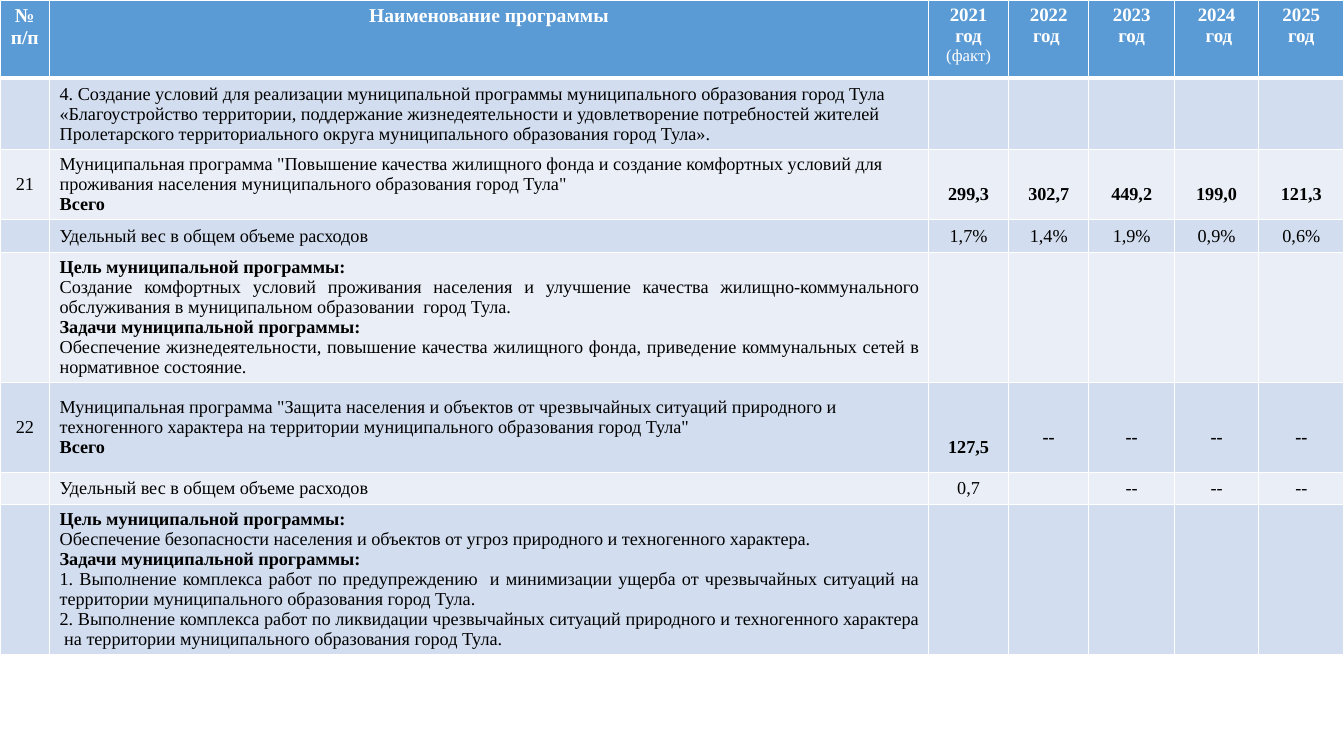
from dataclasses import dataclass

from lxml.etree import SubElement
from pptx import Presentation
from pptx.dml.color import RGBColor
from pptx.enum.text import MSO_ANCHOR, PP_ALIGN
from pptx.oxml.ns import qn
from pptx.util import Cm, Pt


@dataclass(frozen=True)
class Theme:
    font: str = "Times New Roman"
    header: str = "5B9BD5"
    band_dark: str = "D2DEEF"
    band_light: str = "EAEFF7"
    white: str = "FFFFFF"
    black: str = "000000"
    head: float = 14
    year: float = 13.5
    body: float = 13
    note: float = 12


T = Theme()
LEFT, CENTER, JUSTIFY = PP_ALIGN.LEFT, PP_ALIGN.CENTER, PP_ALIGN.JUSTIFY


def write(cell, text, size=T.body, bold=False, color=T.black, align=CENTER, same_line=False):
    """Add text to a cell, in a new paragraph unless same_line is set."""
    tf = cell.text_frame
    p = tf.paragraphs[-1]
    if tf.text and not same_line:
        p = tf.add_paragraph()
    p.alignment = align
    r = p.add_run()
    r.text = text
    r.font.name, r.font.size, r.font.bold = T.font, Pt(size), bold
    r.font.color.rgb = RGBColor.from_string(color)


def style_cell(cell, fill, bottom=1):
    """Give a cell white borders and a solid fill."""
    tcPr = cell._tc.get_or_add_tcPr()
    for side, width in (("L", 1), ("R", 1), ("T", 1), ("B", bottom)):
        ln = SubElement(tcPr, qn(f"a:ln{side}"), w=str(Pt(width)))
        SubElement(SubElement(ln, qn("a:solidFill")), qn("a:srgbClr"), val=T.white)
    cell.fill.solid()
    cell.fill.fore_color.rgb = RGBColor.from_string(fill)


# Content
YEARS = [["2021 год "], ["2022 год "], ["2023 год"], ["2024", " год"], ["2025", "год"]]
GOAL = "Цель муниципальной программы: "
TASKS = "Задачи муниципальной программы:"
TOTAL = "Всего"
SHARE = "Удельный вес в общем объеме расходов"
BOLD_LINES = (GOAL, TASKS, TOTAL)
NO_VALUES = [""] * 5

# Number, name lines, alignment, yearly values, extra top margins of the values (cm)
ROWS = [
    ("", ["4. Создание условий для реализации муниципальной программы муниципального образования "
          "город Тула «Благоустройство территории, поддержание жизнедеятельности и удовлетворение "
          "потребностей жителей Пролетарского территориального округа муниципального образования "
          "город Тула»."], LEFT, NO_VALUES, [0] * 5),
    ("21", ['Муниципальная программа "Повышение качества жилищного фонда и создание комфортных '
            'условий для проживания населения муниципального образования город Тула"', TOTAL],
     LEFT, ["299,3", "302,7", "449,2", "199,0", "121,3"], [0.5] * 5),
    ("", [SHARE], JUSTIFY, ["1,7%", "1,4%", "1,9%", "0,9%", "0,6%"], [0] * 5),
    ("", [GOAL,
          "Создание комфортных условий проживания населения и улучшение качества "
          "жилищно-коммунального обслуживания в муниципальном образовании  город Тула.",
          TASKS,
          "Обеспечение жизнедеятельности, повышение качества жилищного фонда, приведение "
          "коммунальных сетей в нормативное состояние."], JUSTIFY, NO_VALUES, [0] * 5),
    ("22", ['Муниципальная программа "Защита населения и объектов от чрезвычайных ситуаций '
            'природного и техногенного характера на территории муниципального образования '
            'город Тула"', TOTAL],
     LEFT, ["127,5", "--", "--", "--", "--"], [1, 0.5, 0.5, 0.5, 0.5]),
    ("", [SHARE], JUSTIFY, ["0,7", "", "--", "--", "--"], [0] * 5),
    ("", [GOAL,
          "Обеспечение безопасности населения и объектов от угроз природного и техногенного "
          "характера.",
          TASKS,
          "1. Выполнение комплекса работ по предупреждению  и минимизации ущерба от чрезвычайных "
          "ситуаций на территории муниципального образования город Тула.",
          "2. Выполнение комплекса работ по ликвидации чрезвычайных ситуаций природного и "
          "техногенного характера  на территории муниципального образования город Тула."],
     JUSTIFY, NO_VALUES, [0] * 5),
]
COL_WIDTHS = [1.25, 22.15, 2.02, 2.02, 2.16, 2.12, 2.15]
ROW_HEIGHTS = [1.97, 1.8, 1.77, 0.76, 3.28, 2.27, 0.78, 3.78]

# Slide and table
prs = Presentation()
prs.slide_width, prs.slide_height = Cm(33.87), Cm(19.05)
s = prs.slides.add_slide(prs.slide_layouts[6])
table = s.shapes.add_table(len(ROW_HEIGHTS), len(COL_WIDTHS), 0, 0,
                           Cm(sum(COL_WIDTHS)), Cm(sum(ROW_HEIGHTS))).table
table.horz_banding = False
for column, width in zip(table.columns, COL_WIDTHS):
    column.width = Cm(width)
for row, height in zip(table.rows, ROW_HEIGHTS):
    row.height = Cm(height)

# Header row
for col, lines in enumerate([["№ п/п"], ["Наименование программы"], *YEARS]):
    cell = table.cell(0, col)
    style_cell(cell, T.header, bottom=3)
    for line in lines:
        write(cell, line, size=T.head if col < 2 else T.year, bold=True, color=T.white)
write(table.cell(0, 2), "(факт)", size=T.note, color=T.white, same_line=True)

# Programme rows
for i, (number, lines, align, values, offsets) in enumerate(ROWS, start=1):
    for col, text in enumerate([number, lines, *values]):
        cell = table.cell(i, col)
        style_cell(cell, T.band_dark if i % 2 else T.band_light)
        cell.vertical_anchor = MSO_ANCHOR.MIDDLE
        if col == 1:
            for line in lines:
                write(cell, line, bold=line in BOLD_LINES, align=align)
        elif text:
            write(cell, text, bold=col > 1 and bool(number))
            if col > 1:
                cell.margin_top = Cm(0.13 + offsets[col - 2])
        else:
            # An empty cell keeps the body size so that its row stays low
            p = cell.text_frame.paragraphs[0]
            SubElement(p._p, qn("a:endParaRPr"), sz=str(int(T.body * 100)))

prs.save("out.pptx")
